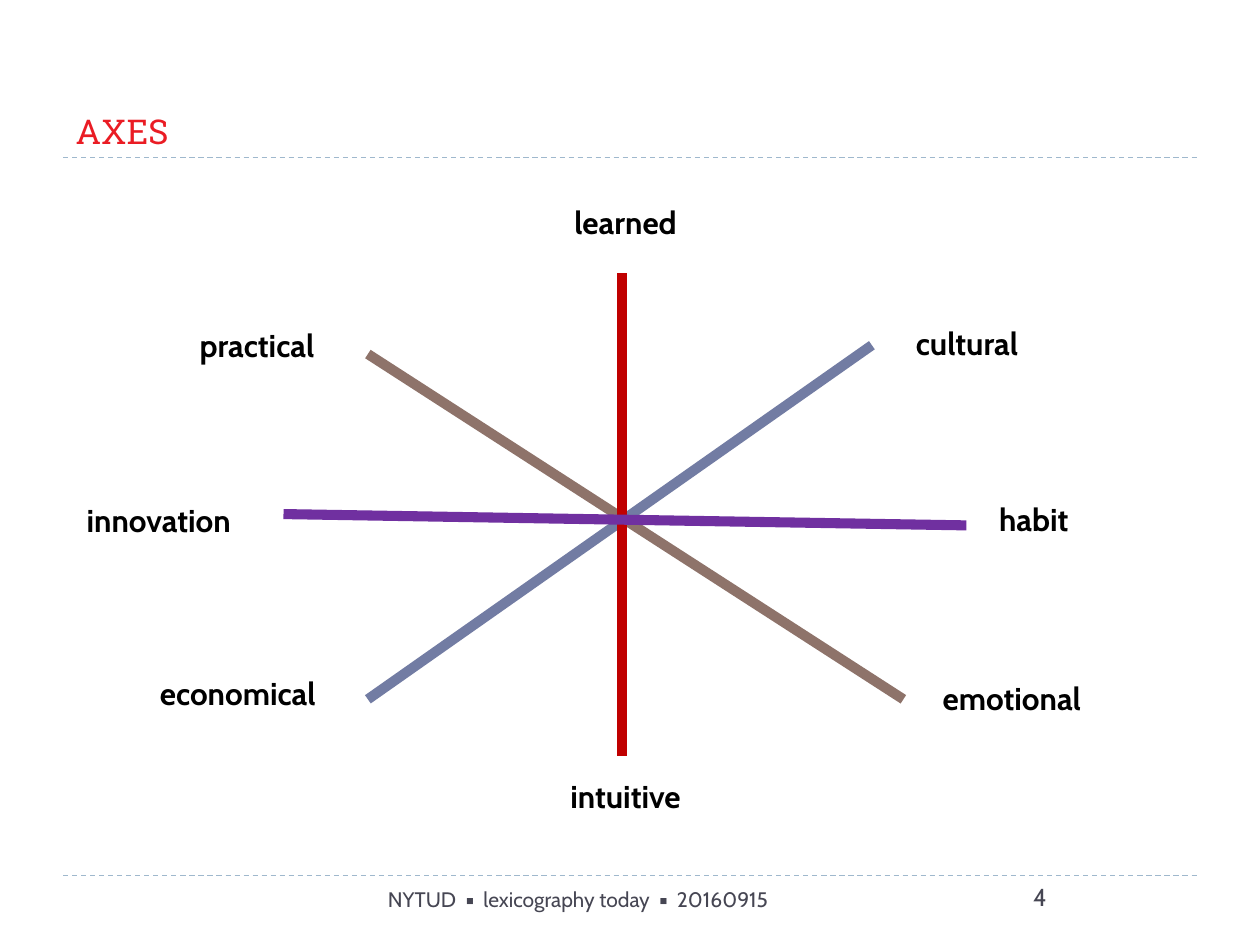
from lxml import etree
from pptx import Presentation
from pptx import util as u
from pptx.dml.color import RGBColor
from pptx.enum import dml, shapes, text
from pptx.oxml import ns

COLUMNS, ROWS = 100, 75
TITLE_ONLY = 5

RED = RGBColor(0xEA, 0x1C, 0x24)
SLATE = RGBColor(0x46, 0x46, 0x53)
BLACK = RGBColor(0, 0, 0)
WHITE = RGBColor(0xFF, 0xFF, 0xFF)
PALE_BLUE = RGBColor(0x9F, 0xB8, 0xCD)
BROWN = RGBColor(0x8E, 0x73, 0x6A)
BLUE = RGBColor(0x72, 0x7C, 0xA3)
CRIMSON = RGBColor(0xC0, 0, 0)
PURPLE = RGBColor(0x70, 0x30, 0xA0)

LEFT, CENTER = text.PP_ALIGN.LEFT, text.PP_ALIGN.CENTER

# colour, start, end
AXES = [
    (BROWN, (29.2, 28.1), (71.7, 55.5)),
    (BLUE, (29.2, 55.5), (69.2, 27.4)),
    (CRIMSON, (49.4, 21.7), (49.4, 60)),
    (PURPLE, (22.5, 40.8), (76.7, 41.7)),
]

# wording, left, top, width, alignment
POLES = [
    ("practical", 14.2, 25.4, 12.4, CENTER),
    ("emotional", 73.2, 53.4, 14.2, CENTER),
    ("economical", 11.7, 53, 15.8, LEFT),
    ("cultural", 71.7, 25.2, 11.7, LEFT),
    ("learned", 41.6, 15.6, 16.1, CENTER),
    ("intuitive", 41.6, 61.2, 16.1, CENTER),
    ("innovation", 2.7, 39.3, 19.8, CENTER),
    ("habit", 76.7, 39.2, 10.7, CENTER),
]


class SlideBuilder:
    heading_font = "Roboto Slab"
    body_font = "Cabin"

    def __init__(self, deck):
        self.deck = deck
        self.page = deck.slides.add_slide(deck.slide_layouts[TITLE_ONLY])
        fill = self.page.background.fill
        fill.solid()
        fill.fore_color.rgb = WHITE

    def x(self, columns):
        return round(self.deck.slide_width * columns / COLUMNS)

    def y(self, rows):
        return round(self.deck.slide_height * rows / ROWS)

    def add_span(self, box, wording, font, size, color, align, bold=False):
        para = box.text_frame.paragraphs[0]
        para.alignment = align
        span = para.add_run()
        span.text = wording
        span.font.name = font
        span.font.size = u.Pt(size)
        span.font.bold = bold
        span.font.color.rgb = color

    def title(self, wording, left, top, width, height):
        box = self.page.shapes.title
        box.left, box.top = self.x(left), self.y(top)
        box.width, box.height = self.x(width), self.y(height)
        box.text_frame.vertical_anchor = text.MSO_ANCHOR.BOTTOM
        box.text_frame.auto_size = text.MSO_AUTO_SIZE.NONE
        self.add_span(box, wording, self.heading_font, 19.5, RED, LEFT)

    def label(self, wording, left, top, width, align=CENTER,
              size=18, color=BLACK, bold=True):
        box = self.page.shapes.add_textbox(
            self.x(left), self.y(top), self.x(width), self.y(4))
        box.text_frame.word_wrap = True
        self.add_span(box, wording, self.body_font, size, color, align, bold)

    def line(self, color, start, end, weight=5.75, dash=None):
        line = self.page.shapes.add_connector(
            shapes.MSO_CONNECTOR.STRAIGHT,
            self.x(start[0]), self.y(start[1]), self.x(end[0]), self.y(end[1]))
        line.line.color.rgb = color
        line.line.width = u.Pt(weight)
        if dash:
            line.line.dash_style = dash
        properties = line._element.spPr
        etree.SubElement(properties, ns.qn("a:effectLst"))


def main():
    deck = Presentation()
    deck.slide_width, deck.slide_height = u.Inches(10), u.Inches(7.5)
    slide = SlideBuilder(deck)

    for row in (69.5, 12.5):
        slide.line(PALE_BLUE, (5, row), (95, row), 0.75, dml.MSO_LINE.DASH)
    slide.title("AXES", 5, 1.7, 90, 10.8)

    for axis in AXES:
        slide.line(*axis)
    for pole in POLES:
        slide.label(*pole)

    slide.label("NYTUD  ▪  lexicography today  ▪  20160915", 26.7, 69.9, 38.4,
                size=12, color=SLATE, bold=False)
    slide.label("4", 71.7, 69.5, 21.7, size=14, color=SLATE, bold=False)
    deck.save("out.pptx")


if __name__ == "__main__":
    main()
